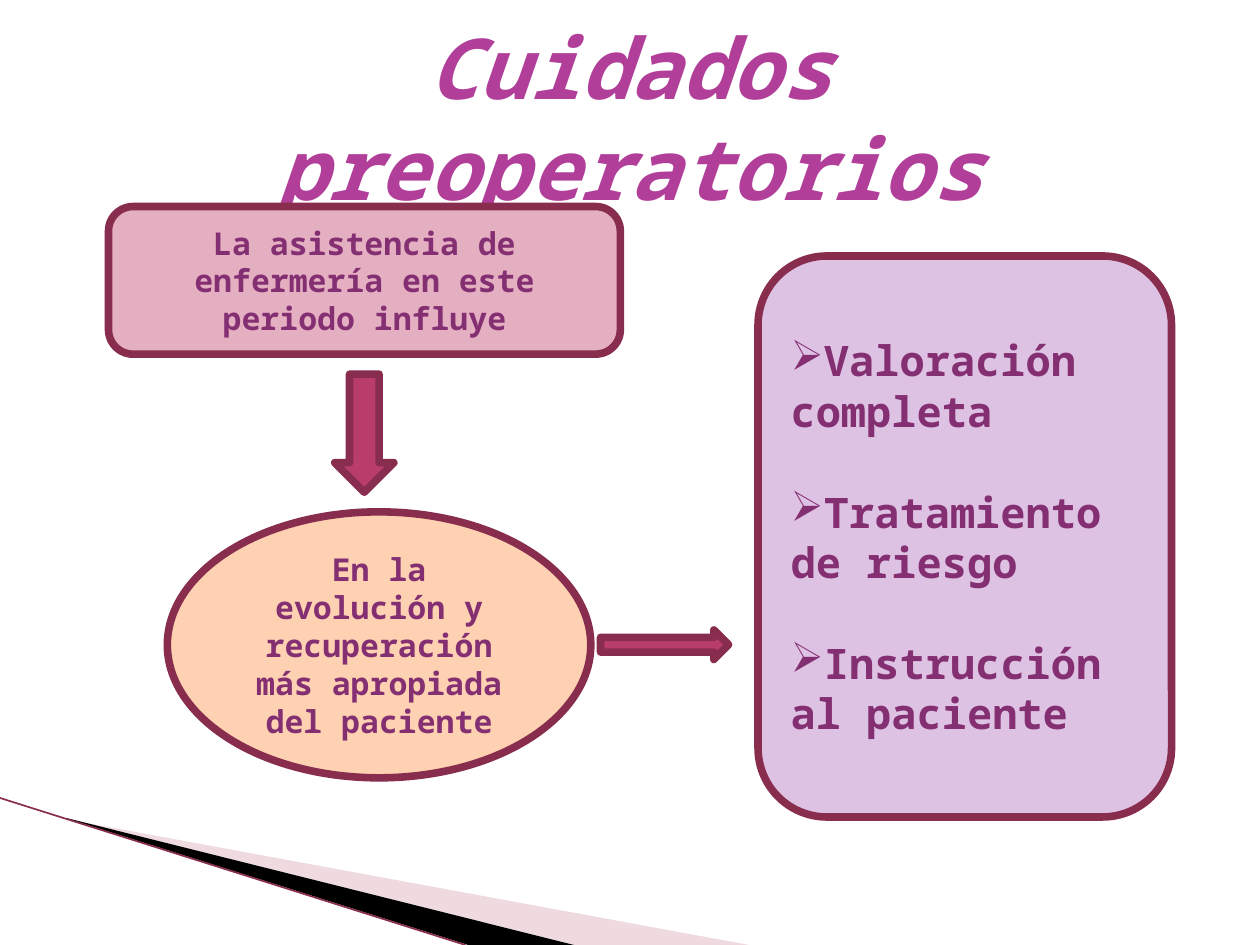
"""Build the slide on preoperative care."""
from lxml import etree
from pptx import Presentation
from pptx import util as u
from pptx.dml.color import RGBColor
from pptx.enum import shapes, text
from pptx.oxml import ns

Pt = u.Pt
FONT = "Noto Sans Mono"
COLORS = {
    "title": "B13F9A", "text": "852F73", "border": "882D4D", "arrow": "B83D68",
    "rose": "E5AFC2", "peach": "FDD1B1", "lilac": "DEC2E4",
    "wedge": "D8A3AF", "black": "000000",
}


def color(name):
    return RGBColor.from_string(COLORS[name])


def add_child(parent, tag, **attributes):
    return etree.SubElement(parent, ns.qn(tag), attributes)


def add_span(para, words, size, name, italic=False):
    span = para.add_run()
    span.text = words
    font = span.font
    font.name, font.size = FONT, Pt(size)
    font.bold, font.italic = True, italic
    font.color.rgb = color(name)


def set_title(page, words):
    title = page.shapes.title
    title.left, title.top, title.width, title.height = Pt(36), Pt(21.6), Pt(648), Pt(90)
    frame = title.text_frame
    frame.word_wrap = True
    frame.auto_size = text.MSO_AUTO_SIZE.NONE
    frame.vertical_anchor = text.MSO_ANCHOR.MIDDLE
    para = frame.paragraphs[0]
    para.alignment = text.PP_ALIGN.CENTER
    add_span(para, words, 48, "title", italic=True)


def add_wedge(page, points, fill, opacity=100):
    start, *rest = [(Pt(x), Pt(y)) for x, y in points]
    builder = page.shapes.build_freeform(*start)
    builder.add_line_segments(rest, close=True)
    wedge = builder.convert_to_shape()
    wedge.shadow.inherit = False
    wedge.fill.solid()
    wedge.fill.fore_color.rgb = color(fill)
    wedge.line.fill.background()
    if opacity < 100:
        tone = wedge._element.spPr.find(".//" + ns.qn("a:srgbClr"))
        add_child(tone, "a:alpha", val=str(opacity * 1000))


def add_edge(page, start, end):
    edge = page.shapes.add_connector(
        shapes.MSO_CONNECTOR.STRAIGHT, *map(Pt, start + end))
    edge.line.color.rgb = color("border")
    edge.line.width = Pt(0.95)
    add_child(edge._element.spPr, "a:effectLst")


def add_figure(page, kind, place, fill):
    figure = page.shapes.add_shape(kind, *map(Pt, place))
    figure.shadow.inherit = False
    figure.fill.solid()
    figure.fill.fore_color.rgb = color(fill)
    figure.line.color.rgb = color("border")
    figure.line.width = Pt(4.33)
    add_child(figure._element.spPr.find(ns.qn("a:ln")), "a:round")
    return figure


def add_box(page, kind, place, fill, lines, size=18, bullet=None):
    frame = add_figure(page, kind, place, fill).text_frame
    frame.word_wrap = True
    frame.vertical_anchor = text.MSO_ANCHOR.MIDDLE
    for index, words in enumerate(lines):
        para = frame.add_paragraph() if index else frame.paragraphs[0]
        para.alignment = text.PP_ALIGN.LEFT if bullet else text.PP_ALIGN.CENTER
        if index:
            para.space_before = Pt(28.8)
        if bullet:
            add_child(para._p.get_or_add_pPr(), "a:buChar", char=bullet)
        add_span(para, words, size, "text")


def main():
    deck = Presentation()
    deck.slide_width, deck.slide_height = Pt(720), Pt(540)
    page = deck.slides.add_slide(deck.slide_layouts[5])
    kinds = shapes.MSO_SHAPE

    add_wedge(page, [(39.6, 468.5), (428, 540), (328, 540), (39.6, 468)], "wedge", 40)
    add_wedge(page, [(38, 467.5), (328, 540), (267.5, 540), (39, 468)], "black")
    add_edge(page, (0, 456), (266, 540))

    set_title(page, "Cuidados preoperatorios")
    add_box(page, kinds.ROUNDED_RECTANGLE, (62, 118, 292.5, 84.4), "rose",
            ["La asistencia de enfermería en este periodo influye"])
    add_figure(page, kinds.DOWN_ARROW, (191.3, 213.8, 33.8, 67.5), "arrow")
    add_box(page, kinds.OVAL, (95.6, 292.5, 242, 152), "peach",
            ["En la evolución y recuperación más apropiada del paciente"])
    add_box(page, kinds.ROUNDED_RECTANGLE, (433.2, 146.3, 236.3, 320.6), "lilac",
            ["Valoración completa", "Tratamiento de riesgo", "Instrucción al paciente"],
            size=24, bullet="➢")
    add_figure(page, kinds.RIGHT_ARROW, (343.2, 360, 73.2, 16.9), "arrow")

    deck.save("out.pptx")


if __name__ == "__main__":
    main()
